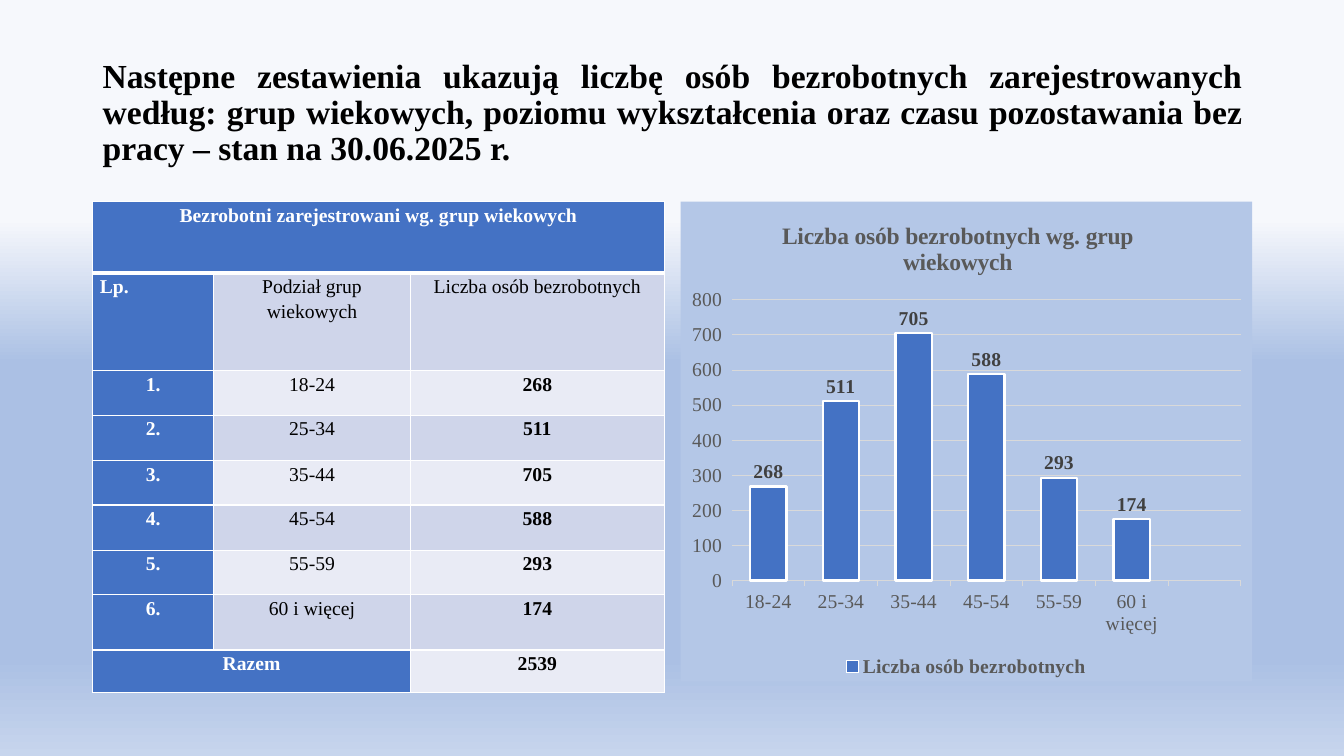
from dataclasses import dataclass

from lxml.etree import SubElement
from pptx import Presentation
from pptx.chart.data import CategoryChartData
from pptx.dml.color import RGBColor
from pptx.enum.chart import XL_CHART_TYPE as ChartType, XL_LEGEND_POSITION as LegendPos
from pptx.enum.chart import XL_LABEL_POSITION as LabelPos, XL_TICK_MARK as Tick
from pptx.enum.text import MSO_ANCHOR as Anchor, PP_ALIGN as Align
from pptx.oxml import parse_xml
from pptx.oxml.ns import nsdecls, qn
from pptx.util import Inches, Pt


@dataclass(frozen=True)
class Theme:
    """Colours, font and type sizes of the slide."""
    font: str = "Times New Roman"
    black: str = "000000"
    white: str = "FFFFFF"
    blue: str = "4472C4"
    bands: tuple = ("CFD5EA", "E9EBF5")
    panel: str = "B4C7E7"
    grey: str = "595959"
    label: str = "404040"
    grid: str = "D9D9D9"
    backdrop: tuple = ((29, "F6F8FC"), (48, "ABC0E4"), (87, "ABC0E4"), (100, "C7D5ED"))
    title: float = 24
    chart_title: float = 16.8
    body: float = 14


class SlideBuilder:
    """Draws elements in one theme on the current slide."""

    def __init__(self, prs, theme):
        """Add a blank slide."""
        self.theme = theme
        self.s = prs.slides.add_slide(prs.slide_layouts[6])

    def style(self, font, size, color, bold=False):
        """Apply the theme font with a size, colour and weight."""
        font.name, font.size, font.bold = self.theme.font, Pt(size), bold
        font.color.rgb = RGBColor.from_string(color)

    def paint(self, fill, color):
        """Make a fill solid."""
        fill.solid()
        fill.fore_color.rgb = RGBColor.from_string(color)

    def stroke(self, line, color, width):
        """Set the colour and width of a line."""
        line.color.rgb = RGBColor.from_string(color)
        line.width = Pt(width)

    def background(self):
        """Fill the background with a vertical gradient."""
        fill = self.s.background.fill
        fill.gradient()
        grad = self.s.background._cSld.find(".//" + qn("a:gradFill"))
        for child in list(grad):
            grad.remove(child)
        stops = SubElement(grad, qn("a:gsLst"))
        for pos, color in self.theme.backdrop:
            stop = SubElement(stops, qn("a:gs"), pos=str(pos * 1000))
            SubElement(stop, qn("a:srgbClr"), val=color)
        SubElement(grad, qn("a:lin"), ang="5400000", scaled="0")

    def title(self, text, left, top, width, height):
        """Add the justified heading."""
        tf = self.s.shapes.add_textbox(*map(Inches, (left, top, width, height))).text_frame
        tf.word_wrap, tf.vertical_anchor = True, Anchor.MIDDLE
        p = tf.paragraphs[0]
        p.text, p.alignment, p.line_spacing = text, Align.JUSTIFY, 0.9
        self.style(p.font, self.theme.title, self.theme.black, True)

    def borders(self, cell, top=1, bottom=1):
        """Draw white borders around a cell."""
        tc_pr = cell._tc.get_or_add_tcPr()
        for i, (side, width) in enumerate(zip("LRTB", (1, 1, top, bottom))):
            tc_pr.insert(i, parse_xml(
                f'<a:ln{side} {nsdecls("a")} w="{Pt(width)}"><a:solidFill>'
                f'<a:srgbClr val="{self.theme.white}"/></a:solidFill></a:ln{side}>'))

    def cell(self, cell, text, fill, color, bold, align=Align.CENTER):
        """Fill one table cell with text and colour."""
        cell.margin_left = cell.margin_right = Inches(0.07)
        cell.margin_top = cell.margin_bottom = 0
        self.paint(cell.fill, fill)
        p = cell.text_frame.paragraphs[0]
        p.text, p.alignment = text, align
        p.line_spacing, p.space_after = 1.15, Pt(10)
        self.style(p.font, self.theme.body, color, bold)

    def table(self, rows, merges, left, top, widths, heights):
        """Add the table with a blue heading row and first column."""
        t = self.theme
        frame = self.s.shapes.add_table(
            len(rows), len(widths),
            *map(Inches, (left, top, sum(widths), sum(heights))))
        table = frame.table
        for column, width in zip(table.columns, widths):
            column.width = Inches(width)
        for row, height in zip(table.rows, heights):
            row.height = Inches(height)
        for i, row in enumerate(rows):
            for j, text in enumerate(row):
                cell = table.cell(i, j)
                head = i == 0 or j == 0 or (i == len(rows) - 1 and j == 1)
                fill = t.blue if head else t.bands[(i - 1) % 2]
                color = t.white if head else t.black
                align = Align.JUSTIFY if (i, j) == (1, 0) else Align.CENTER
                self.cell(cell, text, fill, color, head or (j == 2 and i > 1), align)
                self.borders(cell, 3 if i == 1 else 1, 3 if i == 0 else 1)
        for row, first, last in merges:
            table.cell(row, first).merge(table.cell(row, last))

    def place(self, parent, index, inner=False, **box):
        """Give a chart part a manual layout as fractions of the chart."""
        target = '<c:layoutTarget val="inner"/>' if inner else ""
        modes = "".join(f'<c:{k}Mode val="edge"/>' for k in "xy")
        sizes = "".join(f'<c:{k} val="{v}"/>' for k, v in box.items())
        for old in parent.findall(qn("c:layout")):
            parent.remove(old)
        parent.insert(index, parse_xml(
            f'<c:layout {nsdecls("c")}><c:manualLayout>{target}{modes}{sizes}'
            '</c:manualLayout></c:layout>'))

    def axis(self, axis):
        """Style the tick labels of an axis."""
        axis.major_tick_mark = Tick.OUTSIDE
        self.style(axis.tick_labels.font, self.theme.body, self.theme.grey)

    def chart(self, title, name, cats, vals, left, top, width, height):
        """Add the column chart on a tinted panel."""
        t = self.theme
        data = CategoryChartData()
        data.categories = cats
        data.add_series(name, vals)
        chart = self.s.shapes.add_chart(
            ChartType.COLUMN_CLUSTERED, *map(Inches, (left, top, width, height)), data).chart
        self.style(chart.font, t.body, t.black)
        space = chart._chartSpace
        panel = parse_xml(
            f'<c:spPr {nsdecls("c", "a")}><a:solidFill><a:srgbClr val="{t.panel}"/>'
            '</a:solidFill><a:ln><a:noFill/></a:ln></c:spPr>')
        space.find(qn("c:chart")).addnext(panel)

        p = chart.chart_title.text_frame.paragraphs[0]
        p.text = title
        self.style(p.font, t.chart_title, t.grey, True)
        self.place(chart.chart_title._element, 1, x=0.17, y=0.03)
        chart.chart_title.include_in_layout = False

        chart.has_legend = True
        chart.legend.position, chart.legend.include_in_layout = LegendPos.BOTTOM, False
        self.style(chart.legend.font, t.body, t.grey, True)

        cat, val = chart.category_axis, chart.value_axis
        self.axis(cat)
        self.stroke(cat.format.line, t.grid, 0.75)
        self.axis(val)
        val.format.line.fill.background()
        self.stroke(val.major_gridlines.format.line, t.grid, 0.75)
        val.minimum_scale, val.maximum_scale, val.major_unit = 0, 800, 100

        plot = chart.plots[0]
        plot.gap_width, plot.vary_by_categories = 100, False
        series = plot.series[0]
        self.paint(series.format.fill, t.blue)
        self.stroke(series.format.line, t.white, 1.5)
        labels = series.data_labels
        labels.show_value, labels.position = True, LabelPos.OUTSIDE_END
        self.style(labels.font, t.body, t.label, True)
        self.place(space.find(".//" + qn("c:plotArea")), 0, True,
                   x=0.09, y=0.205, w=0.89, h=0.585)


def main():
    """Build and save the slide."""
    prs = Presentation()
    prs.slide_width, prs.slide_height = Inches(13.33), Inches(7.5)
    groups = {"18-24": 268, "25-34": 511, "35-44": 705,
              "45-54": 588, "55-59": 293, "60 i więcej": 174}
    name = "Liczba osób bezrobotnych"
    rows = [("Bezrobotni zarejestrowani wg. grup wiekowych", "", ""),
            ("Lp.", "Podział grup wiekowych", name)]
    rows += [(f"{i}.", group, str(n)) for i, (group, n) in enumerate(groups.items(), 1)]
    rows.append(("Razem", "", str(sum(groups.values()))))

    slide = SlideBuilder(prs, Theme())
    slide.background()
    slide.title("Następne zestawienia ukazują liczbę osób bezrobotnych zarejestrowanych "
                "według: grup wiekowych, poziomu wykształcenia oraz czasu pozostawania bez "
                "pracy – stan na 30.06.2025 r.", 0.92, 0.4, 11.5, 1.45)
    slide.table(rows, [(0, 0, 2), (len(rows) - 1, 0, 1)], 0.92, 2, (1.2, 1.95, 2.52),
                (0.71, 0.97, 0.44, 0.45, 0.44, 0.45, 0.44, 0.55, 0.42))
    slide.chart("Liczba osób bezrobotnych wg. grup wiekowych", name,
                [*groups, ""], [*groups.values(), None], 6.75, 2, 5.67, 4.76)
    prs.save("out.pptx")


if __name__ == "__main__":
    main()
